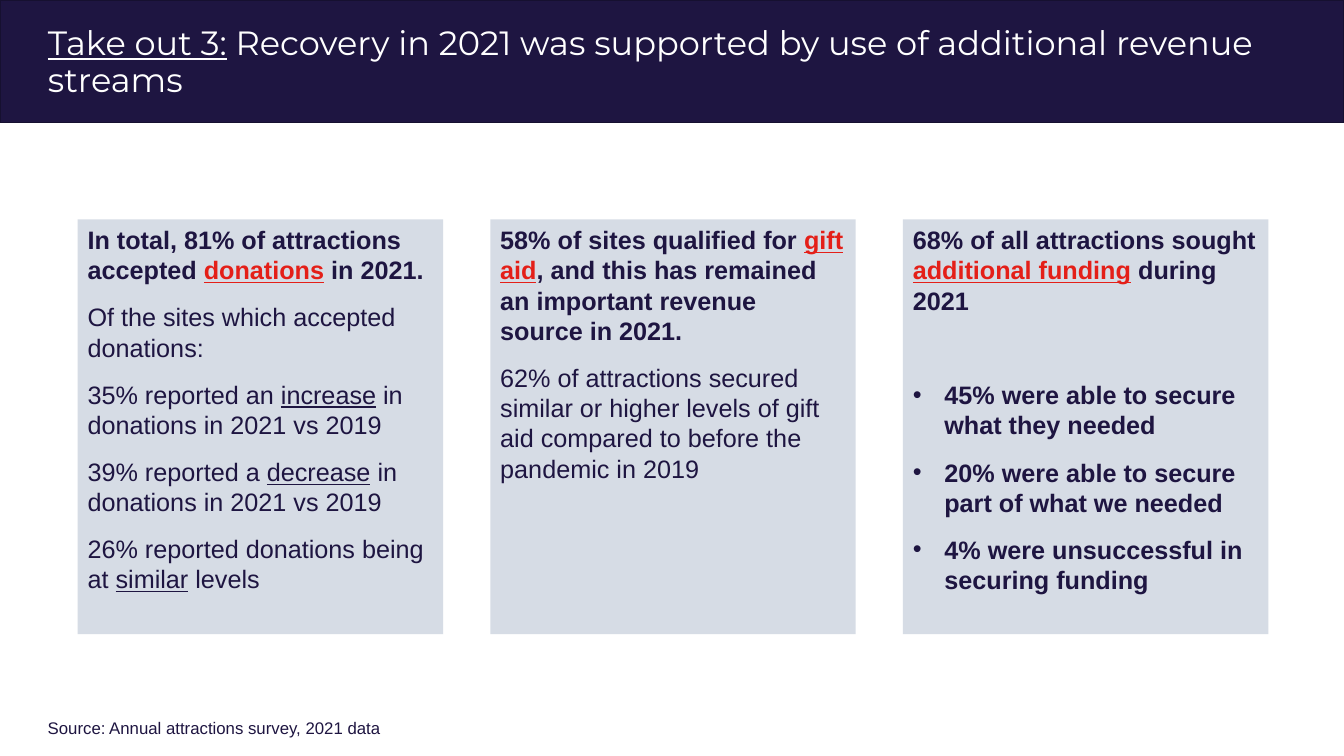
from dataclasses import dataclass

from lxml.etree import SubElement
from pptx import Presentation
from pptx.dml.color import RGBColor
from pptx.enum.shapes import MSO_SHAPE as Shape
from pptx.enum.text import MSO_ANCHOR as Anchor, MSO_AUTO_SIZE as AutoSize, PP_ALIGN as Align
from pptx.oxml.ns import qn
from pptx.util import Pt

PX = 9525  # EMU per px, 96 px to the inch


@dataclass(frozen=True)
class Theme:
    navy: RGBColor = RGBColor(0x1E, 0x15, 0x41)
    navy_edge: RGBColor = RGBColor(0x16, 0x10, 0x30)
    red: RGBColor = RGBColor(0xE4, 0x1F, 0x18)
    card: RGBColor = RGBColor(0xD6, 0xDC, 0xE5)
    white: RGBColor = RGBColor(0xFF, 0xFF, 0xFF)
    title_font: str = "Montserrat"
    body_font: str = "Arial"
    title_size: int = 24
    body_size: int = 18
    source_size: int = 12


theme = Theme()


def add_rectangle(left, top, width, height, fill):
    shape = slide.shapes.add_shape(
        Shape.RECTANGLE, left * PX, top * PX, width * PX, height * PX)
    shape.shadow.inherit = False
    shape.fill.solid()
    shape.fill.fore_color.rgb = fill
    shape.line.fill.background()
    return shape


def add_run(paragraph, text, font, size, color, bold=False, underline=False):
    run = paragraph.add_run()
    run.text = text
    run.font.name = font
    run.font.size = Pt(size)
    run.font.color.rgb = color
    run.font.bold = bold
    run.font.underline = underline


presentation = Presentation()
presentation.slide_width = 1280 * PX
presentation.slide_height = 720 * PX
slide = presentation.slides.add_slide(presentation.slide_layouts[5])

# Title band, placed behind the title
band = add_rectangle(0, 0, 1280, 117, theme.navy)
band.line.color.rgb = theme.navy_edge
band.line.width = Pt(1)
slide.shapes.title.element.addprevious(band.element)

# Title
title = slide.shapes.title
title.left, title.top, title.width, title.height = (
    length * PX for length in (36, 18, 1211, 84))
title_frame = title.text_frame
title_frame.word_wrap = True
title_frame.auto_size = AutoSize.NONE
title_frame.vertical_anchor = Anchor.MIDDLE
title_paragraph = title_frame.paragraphs[0]
title_paragraph.alignment = Align.LEFT
title_paragraph.line_spacing = 0.9
for text, underline in (
    ("Take out 3:", True),
    (" Recovery in 2021 was supported by use of additional revenue streams", False),
):
    add_run(title_paragraph, text, theme.title_font, theme.title_size,
            theme.white, underline=underline)

# Cards: each paragraph is (kind, space before in points, runs at even places
# plain and runs at odd places underlined)
cards = [
    [
        ("lead", 0, ["In total, 81% of attractions accepted ", "donations", " in 2021."]),
        ("plain", 12, ["Of the sites which accepted donations:"]),
        ("plain", 12, ["35% reported an ", "increase", " in donations in 2021 vs 2019"]),
        ("plain", 12, ["39% reported a ", "decrease", " in donations in 2021 vs 2019"]),
        ("plain", 12, ["26% reported donations being at ", "similar", " levels"]),
    ],
    [
        ("lead", 0, ["58% of sites qualified for ", "gift aid",
                     ", and this has remained an important revenue source in 2021."]),
        ("plain", 12, ["62% of attractions secured similar or higher levels of gift aid "
                       "compared to before the pandemic in 2019"]),
    ],
    [
        ("lead", 0, ["68% of all attractions sought ", "additional funding", " during 2021"]),
        ("bullet", 46, ["45% were able to secure what they needed"]),
        ("bullet", 12, ["20% were able to secure part of what we needed"]),
        ("bullet", 12, ["4% were unsuccessful in securing funding"]),
    ],
]
card_left, card_top, card_width, card_height, card_pitch = 74, 209, 348, 395, 393
bullet_indent = 30

for column, paragraphs in enumerate(cards):
    card = add_rectangle(card_left + column * card_pitch, card_top,
                         card_width, card_height, theme.card)
    frame = card.text_frame
    frame.word_wrap = True
    frame.vertical_anchor = Anchor.TOP
    for index, (kind, space_before, texts) in enumerate(paragraphs):
        paragraph = frame.add_paragraph() if index else frame.paragraphs[0]
        paragraph.alignment = Align.LEFT
        paragraph.space_before = Pt(space_before)
        if kind == "bullet":
            properties = paragraph._p.get_or_add_pPr()
            properties.set("marL", str(bullet_indent * PX))
            properties.set("indent", str(-bullet_indent * PX))
            SubElement(properties, qn("a:buFont")).set("typeface", theme.body_font)
            SubElement(properties, qn("a:buChar")).set("char", "•")
        for place, text in enumerate(texts):
            marked = place % 2 == 1
            color = theme.red if marked and kind == "lead" else theme.navy
            add_run(paragraph, text, theme.body_font, theme.body_size, color,
                    bold=kind != "plain", underline=marked)

# Source line
source = slide.shapes.add_textbox(36 * PX, 675 * PX, 566 * PX, 28 * PX)
source_frame = source.text_frame
source_frame.word_wrap = True
source_frame.vertical_anchor = Anchor.BOTTOM
source_frame.margin_top = source_frame.margin_bottom = 0
source_paragraph = source_frame.paragraphs[0]
source_paragraph.line_spacing = 0.9
add_run(source_paragraph, "Source: Annual attractions survey, 2021 data",
        theme.body_font, theme.source_size, theme.navy)

presentation.save("out.pptx")
